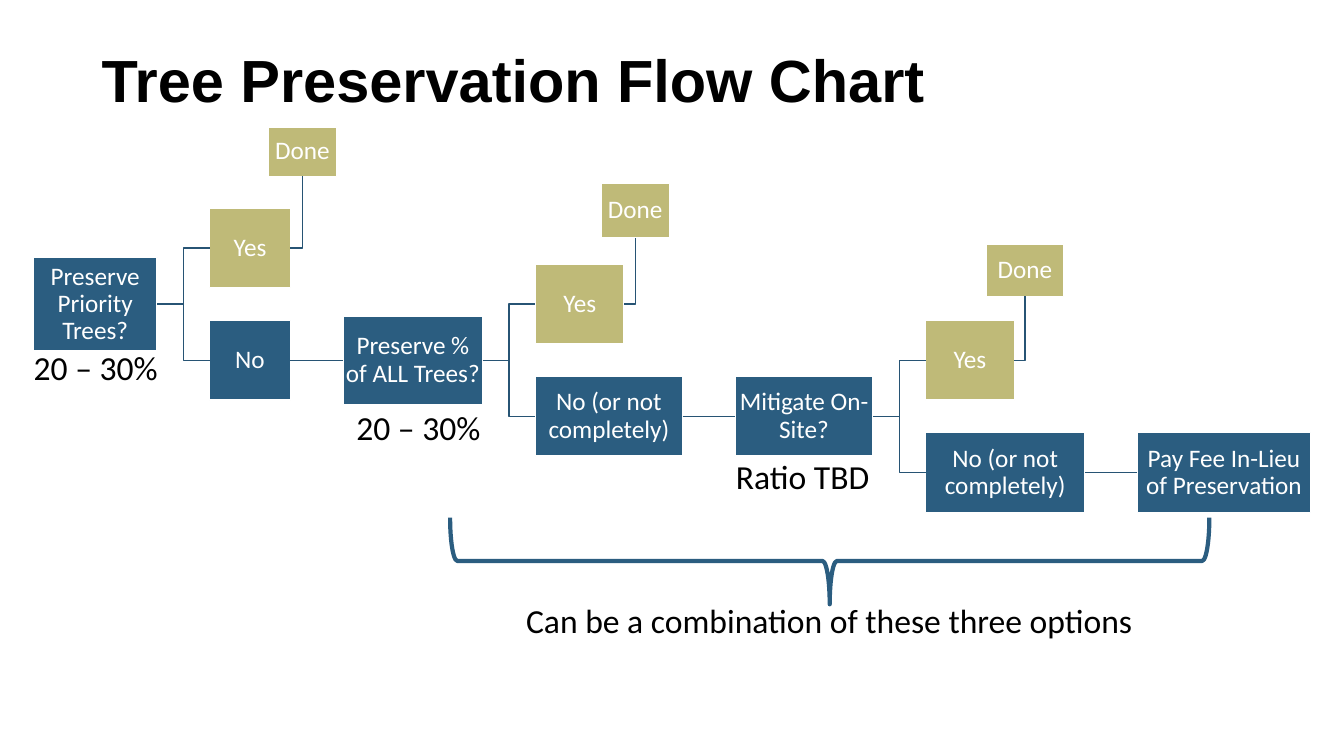
import pptx
import pptx.util
import pptx.dml.color
import pptx.enum.shapes
import pptx.enum.text
from dataclasses import dataclass

Inches = pptx.util.Inches
Pt = pptx.util.Pt
Anchor = pptx.enum.text.MSO_ANCHOR
Align = pptx.enum.text.PP_ALIGN
Shape = pptx.enum.shapes.MSO_SHAPE


@dataclass(frozen=True)
class Theme:
    blue: str = "2B5D80"
    sand: str = "BFBA78"
    wire: str = "275474"
    white: str = "FFFFFF"
    black: str = "000000"
    body: str = "Calibri"
    head: str = "Arial"
    node: float = 18
    note: float = 24
    title: float = 42.5


T = Theme()
TITLE = "Tree Preservation Flow Chart"
SUM = "Can be a combination of these three options"

# Main chain, left to right: text, row, width, height
CHAIN = [
    ("Preserve Priority Trees?", 1, 1.23, 0.93),
    ("No", 2, 0.80, 0.79),
    ("Preserve % of ALL Trees?", 2, 1.39, 0.88),
    ("No (or not completely)", 3, 1.46, 0.79),
    ("Mitigate On-Site?", 3, 1.37, 0.79),
    ("No (or not completely)", 4, 1.58, 0.79),
    ("Pay Fee In-Lieu of Preservation", 4, 1.72, 0.79),
]
# Per question: Yes width, Done left, top, width, height
EXITS = [
    (0.80, 2.66, 1.26, 0.68, 0.49),
    (0.88, 5.96, 1.82, 0.68, 0.54),
    (0.88, 9.78, 2.42, 0.77, 0.52),
]
# Text, left, top, width
NOTES = [
    ("20 – 30%", 0.15, 3.39, 1.60),
    ("20 – 30%", 3.35, 3.99, 1.60),
    ("Ratio TBD", 7.16, 4.47, 1.60),
    (SUM, 4.46, 5.90, 7.53),
]
LEFT, GAP = 0.33, 0.52
TOP, STEP = 2.46, 0.557
YES = 0.79

deck = pptx.Presentation()
deck.slide_width, deck.slide_height = Inches(13.33), Inches(7.5)
slide = deck.slides.add_slide(deck.slide_layouts[6])
shapes = slide.shapes


def color(code):
    return pptx.dml.color.RGBColor.from_string(code)


def write(shape, text, size, code, face=T.body, inset=None, align=Align.CENTER):
    frame = shape.text_frame
    frame.word_wrap = True
    if inset is not None:
        frame.margin_left = frame.margin_right = Inches(inset)
        frame.margin_top = frame.margin_bottom = Inches(inset)
    frame.text = text
    para = frame.paragraphs[0]
    para.alignment = align
    font = para.runs[0].font
    font.name, font.size = face, Pt(size)
    font.color.rgb = color(code)
    return para


def stroke(line, code, width):
    line.color.rgb = color(code)
    line.width = Pt(width)


def node(text, fill, x, y, w, h):
    box = shapes.add_shape(Shape.RECTANGLE, *map(Inches, (x, y, w, h)))
    box.shadow.inherit = False
    box.fill.solid()
    box.fill.fore_color.rgb = color(fill)
    stroke(box.line, T.white, 1)
    box.text_frame.vertical_anchor = Anchor.MIDDLE
    para = write(box, text, T.node, T.white, inset=0.01)
    para.line_spacing = 0.9
    return box


def side(box, spot):
    """Middle of the right, left or bottom side."""
    mid = box.top + box.height // 2
    return {
        "right": (box.left + box.width, mid),
        "left": (box.left, mid),
        "bottom": (box.left + box.width // 2, box.top + box.height),
    }[spot]


def bend(*points):
    pen = shapes.build_freeform(*points[0])
    pen.add_line_segments(points[1:], close=False)
    path = pen.convert_to_shape()
    path.shadow.inherit = False
    path.fill.background()
    stroke(path.line, T.wire, 1)


def fork(ask, reply):
    x, y = side(ask, "right")
    end, drop = side(reply, "left")
    mid = (x + end) // 2
    bend((x, y), (mid, y), (mid, drop), (end, drop))


def join(start, end):
    wire = shapes.add_connector(
        pptx.enum.shapes.MSO_CONNECTOR.STRAIGHT,
        *side(start, "right"), *side(end, "left"))
    wire.begin_connect(start, 3)
    wire.end_connect(end, 1)
    stroke(wire.line, T.wire, 1)
    props = wire._element.spPr
    props.append(props.makeelement(pptx.oxml.ns.qn("a:effectLst"), {}))


# Questions and No boxes step down and to the right
chain, x = [], LEFT
for text, row, w, h in CHAIN:
    chain.append(node(text, T.blue, x, TOP + row * STEP - h / 2, w, h))
    x += w + GAP

# The first line of this question hangs to the left
props = chain[4].text_frame.paragraphs[0]._p.get_or_add_pPr()
props.set("marL", "0")
props.set("indent", str(-Inches(0.3)))

for i, (w, *spot) in enumerate(EXITS):
    ask, no = chain[2 * i], chain[2 * i + 1]
    yes = node("Yes", T.sand, no.left / Inches(1),
               TOP + i * STEP - YES / 2, w, YES)
    done = node("Done", T.sand, *spot)
    fork(ask, yes)
    fork(ask, no)
    start, end = side(yes, "right"), side(done, "bottom")
    bend(start, (end[0], start[1]), end)
    join(no, chain[2 * i + 2])

for text, x, y, w in NOTES:
    box = shapes.add_textbox(*map(Inches, (x, y, w, 0.5)))
    write(box, text, T.note, T.black)

brace = shapes.add_shape(Shape.LEFT_BRACE, *map(Inches, (7.8, 1.8, 0.86, 7.53)))
brace.rotation = 270
brace.shadow.inherit = False
brace.fill.background()
stroke(brace.line, T.blue, 3)

box = shapes.add_textbox(*map(Inches, (0.91, 0.54, 11.5, 0.65)))
box.text_frame.vertical_anchor = Anchor.MIDDLE
para = write(box, TITLE, T.title, T.black, face=T.head, align=Align.LEFT)
para.line_spacing = 0.7
para.runs[0].font.bold = True

deck.save("out.pptx")
